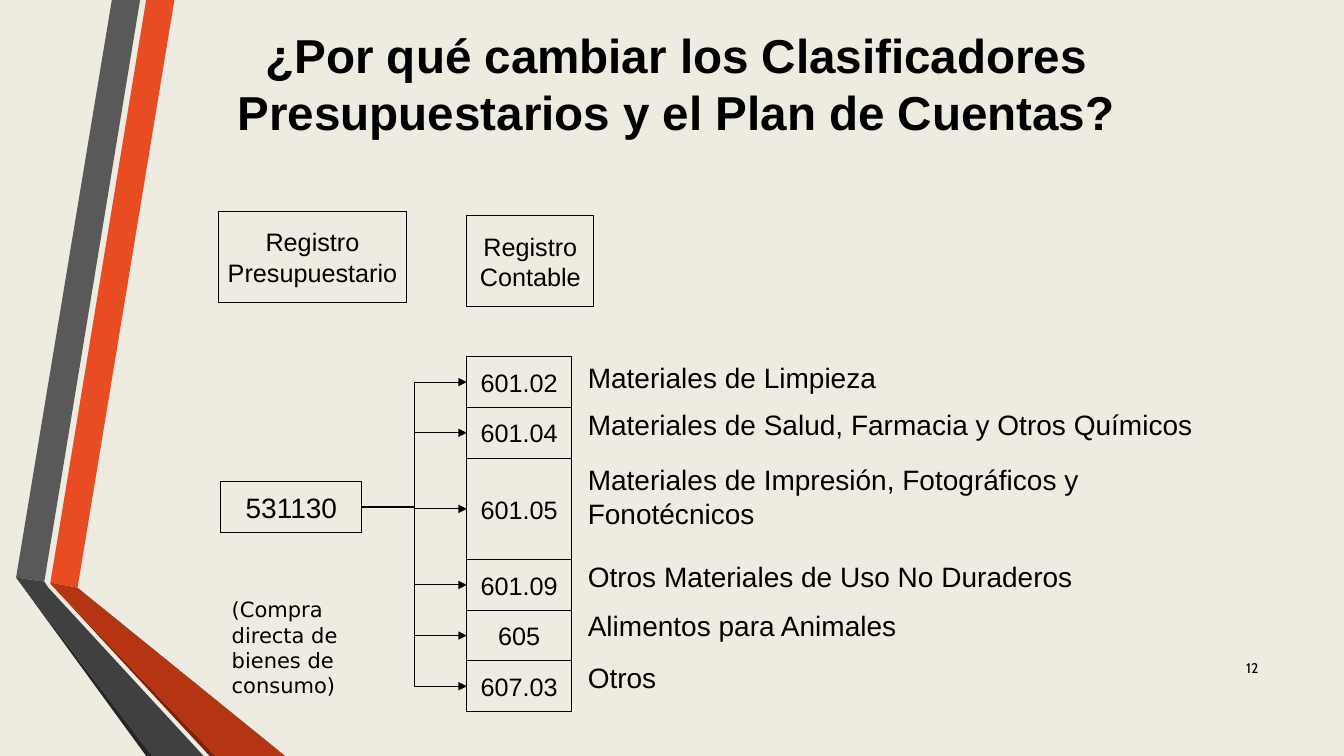
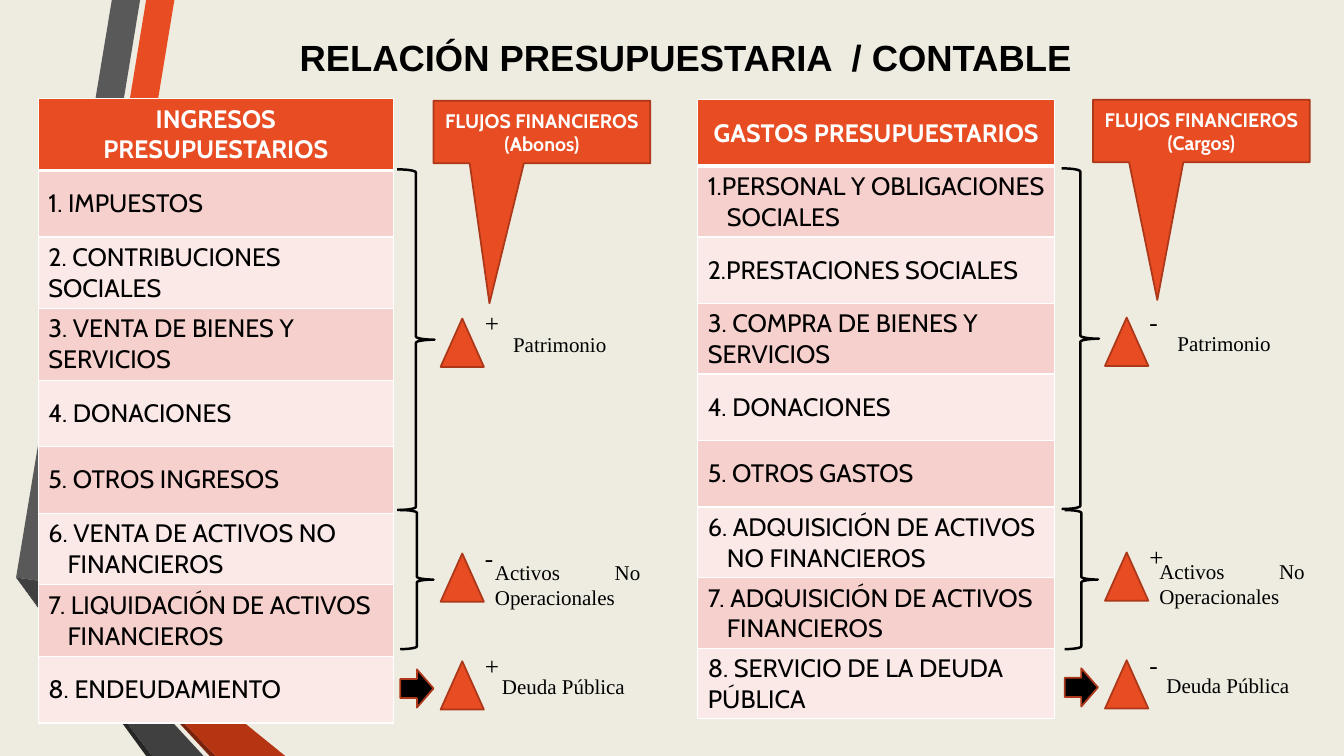
import pptx
import pptx.util
import pptx.dml.color
import pptx.enum.shapes
import pptx.enum.text
import pptx.oxml
import pptx.oxml.ns

Inches, Pt = pptx.util.Inches, pptx.util.Pt
RGBColor = pptx.dml.color.RGBColor
SHAPE = pptx.enum.shapes.MSO_SHAPE
CONNECTOR = pptx.enum.shapes.MSO_CONNECTOR
ALIGN = pptx.enum.text.PP_ALIGN
ANCHOR = pptx.enum.text.MSO_ANCHOR
AUTO_SIZE = pptx.enum.text.MSO_AUTO_SIZE

CREAM = RGBColor(0xEE, 0xEC, 0xE1)
BLACK = RGBColor(0, 0, 0)
WHITE = RGBColor(0xFF, 0xFF, 0xFF)
ORANGE = RGBColor(0xE8, 0x4C, 0x22)
RUST = RGBColor(0xAC, 0x38, 0x19)
PINK = RGBColor(0xF6, 0xD0, 0xCD)
PALE_PINK = RGBColor(0xFB, 0xE9, 0xE8)

RIBBONS = [
    (ORANGE, [(0.5, 5.78), (0.77, 5.83), (1.73, 0), (1.45, 0)]),
    (RGBColor(0x59, 0x59, 0x59), [(1.39, 0), (1.11, 0), (0.16, 5.73), (0.44, 5.77)]),
    (RGBColor(0x26, 0x26, 0x26), [(0.16, 5.73), (1.45, 7.5), (1.51, 7.5)]),
    (RGBColor(0x78, 0x23, 0x0D), [(0.5, 5.79), (2.08, 7.5), (2.14, 7.5)]),
    (RGBColor(0xB5, 0x35, 0x13), [(0.5, 5.79), (2.14, 7.5), (2.83, 7.5), (0.77, 5.83), (0.5, 5.78)]),
    (RGBColor(0x40, 0x40, 0x40), [(2.02, 7.5), (0.48, 5.83), (0.44, 5.77), (0.16, 5.73), (1.51, 7.5)]),
]

# Slide 1
WHY_TITLE = "¿Por qué cambiar los Clasificadores Presupuestarios y el Plan de Cuentas?"
REGISTERS = [
    ("Registro\nPresupuestario", (2.17, 2.1, 1.86, 0.9)),
    ("Registro\nContable", (4.63, 2.14, 1.26, 0.9)),
]
BUDGET_CODE = "531130"
BUDGET_NOTE = "(Compra directa de bienes de consumo)"
PAGE_NUMBER = "12"
# code, rows taken, description, top of description
ACCOUNTS = [
    ("601.02", 1, "Materiales de Limpieza", 3.58),
    ("601.04", 1, "Materiales de Salud, Farmacia y Otros Químicos", 4.04),
    ("601.05", 2, "Materiales de Impresión, Fotográficos y\nFonotécnicos", 4.59),
    ("601.09", 1, "Otros Materiales de Uso No Duraderos", 5.55),
    ("605", 1, "Alimentos para Animales", 6.04),
    ("607.03", 1, "Otros", 6.55),
]
ACCOUNTS_TOP, ACCOUNTS_HEIGHT = 3.54, 3.52

# Slide 2
RELATION_TITLE = "RELACIÓN PRESUPUESTARIA  / CONTABLE"
# flow name, triangle top, label left from the brace, label top, label width and height
FLOWS = [
    ("Patrimonio", 3.16, 1.05, 3.24, 1.45, 0.35),
    ("Activos No Operacionales", 5.49, 0.87, 5.5, 1.64, 0.61),
    ("Deuda Pública", 6.56, 0.94, 6.63, 1.57, 0.35),
]
SIDES = [
    {
        "table": (0.38, 0.98, 3.52), "last_row": 0.66,
        "rows": ["INGRESOS PRESUPUESTARIOS", "1. IMPUESTOS", "2. CONTRIBUCIONES SOCIALES",
                 "3. VENTA DE BIENES Y SERVICIOS", "4. DONACIONES", "5. OTROS INGRESOS",
                 "6. VENTA DE ACTIVOS NO FINANCIEROS", "7. LIQUIDACIÓN DE ACTIVOS FINANCIEROS",
                 "8. ENDEUDAMIENTO"],
        "hanging": {6, 7},
        "callout": "FLUJOS FINANCIEROS (Abonos)", "callout_at": (4.3, 1), "pointer": (-0.242, 2.741),
        "flows_left": 3.94, "flows_shift": 0, "signs": "+-+",
    },
    {
        "table": (6.92, 0.99, 3.54), "last_row": 0.57,
        "rows": ["GASTOS PRESUPUESTARIOS", "1.PERSONAL Y OBLIGACIONES SOCIALES",
                 "2.PRESTACIONES SOCIALES", "3. COMPRA DE BIENES Y SERVICIOS", "4. DONACIONES",
                 "5. OTROS GASTOS", "6. ADQUISICIÓN DE ACTIVOS NO FINANCIEROS",
                 "7. ADQUISICIÓN DE ACTIVOS FINANCIEROS", "8. SERVICIO DE LA DEUDA PÚBLICA"],
        "hanging": {1, 6, 7},
        "callout": "FLUJOS FINANCIEROS (Cargos)", "callout_at": (10.84, 0.99), "pointer": (-0.203, 2.702),
        "flows_left": 10.53, "flows_shift": -0.01, "signs": "-+-",
    },
]


def inches(*lengths):
    return [Inches(length) for length in lengths]


def write(frame, text, size, font="Arial", color=BLACK, bold=False, align=ALIGN.LEFT, anchor=ANCHOR.TOP):
    frame.text = text
    frame.word_wrap = True
    frame.vertical_anchor = anchor
    for paragraph in frame.paragraphs:
        paragraph.alignment = align
        paragraph.font.size = Pt(size)
        paragraph.font.name = font
        paragraph.font.bold = bold
        paragraph.font.color.rgb = color


def add_text(slide, box, text, size, inset=True, **style):
    frame = slide.shapes.add_textbox(*inches(*box)).text_frame
    write(frame, text, size, **style)
    if not inset:
        frame.margin_left = frame.margin_right = frame.margin_top = frame.margin_bottom = 0


def paint(shape, fill=None, line=None, width=0.75):
    shape.shadow.inherit = False
    if fill is None:
        shape.fill.background()
    else:
        shape.fill.solid()
        shape.fill.fore_color.rgb = fill
    if line is None:
        shape.line.fill.background()
    else:
        shape.line.color.rgb = line
        shape.line.width = Pt(width)


def add_shape(slide, preset, box, **look):
    shape = slide.shapes.add_shape(preset, *inches(*box))
    paint(shape, **look)
    return shape


def add_box(slide, box, text, size=18):
    """Outlined rectangle whose centred text breaks only at line ends."""
    shape = add_shape(slide, SHAPE.RECTANGLE, box, line=BLACK)
    write(shape.text_frame, text, size, align=ALIGN.CENTER, anchor=ANCHOR.MIDDLE)
    shape.text_frame.word_wrap = False
    return shape


def set_title(slide, box, text, size):
    title = slide.shapes.title
    title.left, title.top, title.width, title.height = inches(*box)
    write(title.text_frame, text, size, bold=True, align=ALIGN.CENTER, anchor=ANCHOR.MIDDLE)
    title.text_frame.auto_size = AUTO_SIZE.NONE


def decorate_layout(layout, slide):
    """Draw the ribbons on the slide, then move them behind everything in its layout."""
    for position, (color, points) in enumerate(RIBBONS, start=2):
        start, *rest = [inches(*point) for point in points]
        builder = slide.shapes.build_freeform(*start)
        builder.add_line_segments(rest, close=True)
        ribbon = builder.convert_to_shape()
        paint(ribbon, fill=color)
        layout.shapes.element.insert(position, ribbon.element)


def add_arrow(slide, source, target):
    arrow = slide.shapes.add_connector(CONNECTOR.ELBOW, 0, 0, 0, 0)
    arrow.begin_connect(source, 3)
    arrow.end_connect(target, 1)
    arrow.line.color.rgb = BLACK
    arrow.line.width = Pt(0.75)
    namespace = pptx.oxml.ns.nsdecls("a")
    arrow.line._get_or_add_ln().append(pptx.oxml.parse_xml(f'<a:tailEnd {namespace} type="triangle"/>'))
    arrow.element.spPr.append(pptx.oxml.parse_xml(f"<a:effectLst {namespace}/>"))


def set_borders(cell, top, bottom):
    """White borders, 1 pt at the sides and as given above and below."""
    widths = {"lnL": 1, "lnR": 1, "lnT": top, "lnB": bottom}
    properties = cell._tc.get_or_add_tcPr()
    for position, (edge, width) in enumerate(widths.items()):
        properties.insert(position, pptx.oxml.parse_xml(
            f'<a:{edge} {pptx.oxml.ns.nsdecls("a")} w="{Pt(width)}">'
            f'<a:solidFill><a:srgbClr val="{WHITE}"/></a:solidFill></a:{edge}>'))


def add_budget_table(slide, side):
    left, top, width = side["table"]
    heights = [0.66] * (len(side["rows"]) - 1) + [side["last_row"]]
    table = slide.shapes.add_table(len(heights), 1, *inches(left, top, width, sum(heights))).table
    for index, (text, height) in enumerate(zip(side["rows"], heights)):
        header = index == 0
        table.rows[index].height = Inches(height)
        cell = table.cell(index, 0)
        cell.fill.solid()
        cell.fill.fore_color.rgb = ORANGE if header else PINK if index % 2 else PALE_PINK
        set_borders(cell, top=3 if index == 1 else 1, bottom=3 if header else 1)
        write(cell.text_frame, text, 18, font="Cabin", color=WHITE if header else BLACK, bold=header,
              align=ALIGN.CENTER if header else ALIGN.LEFT)
        cell.vertical_anchor = ANCHOR.MIDDLE
        if index in side["hanging"]:
            paragraph = cell.text_frame.paragraphs[0]._p.get_or_add_pPr()
            paragraph.set("marL", str(Inches(0.19)))
            paragraph.set("indent", str(-Inches(0.19)))


def add_flows(slide, side):
    left, shift = side["flows_left"], side["flows_shift"]
    accent = {"line": RUST, "width": 1.25}
    for box in [(left, 1.68 + shift, 0.37, 3.38), (left + 0.03, 5.06, 0.33, 1.38)]:
        add_shape(slide, SHAPE.RIGHT_BRACE, box, line=BLACK, width=1.75)
    add_shape(slide, SHAPE.RIGHT_ARROW, (left + 0.03, 6.64 + shift, 0.33, 0.38), fill=BLACK, **accent)
    for sign, (name, top, label_left, label_top, width, height) in zip(side["signs"], FLOWS):
        top += shift
        add_shape(slide, SHAPE.ISOSCELES_TRIANGLE, (left + 0.43, top, 0.43, 0.48), fill=ORANGE, **accent)
        serif = {"font": "Times New Roman", "align": ALIGN.JUSTIFY}
        add_text(slide, (left + 0.77, top - 0.16, 0.31, 0.4), sign, 18, **serif)
        add_text(slide, (left + label_left, label_top + shift, width, height), name, 15, **serif)
    callout = add_shape(slide, SHAPE.RECTANGULAR_CALLOUT, (*side["callout_at"], 2.15, 0.62),
                        fill=ORANGE, **accent)
    callout.adjustments[0], callout.adjustments[1] = side["pointer"]
    write(callout.text_frame, side["callout"], 14, font="Cabin", color=WHITE, bold=True,
          align=ALIGN.CENTER, anchor=ANCHOR.MIDDLE)


def build_why_slide(slide):
    set_title(slide, (2.21, 0.16, 9, 1.32), WHY_TITLE, 34)
    for name, box in REGISTERS:
        add_box(slide, box, name)
    budget = add_box(slide, (2.19, 4.78, 1.4, 0.5), BUDGET_CODE, 20)
    add_text(slide, (2.2, 5.29, 1.49, 1.68), BUDGET_NOTE, 15, font="DejaVu Sans", anchor=ANCHOR.BOTTOM)
    row_height = ACCOUNTS_HEIGHT / sum(rows for _, rows, _, _ in ACCOUNTS)
    top = ACCOUNTS_TOP
    for code, rows, description, description_top in ACCOUNTS:
        height = rows * row_height
        account = add_box(slide, (4.63, top, 1.04, height), code)
        add_arrow(slide, budget, account)
        add_text(slide, (5.83, description_top, 6.4, 0.34), description, 20, inset=False)
        top += height
    add_text(slide, (11.98, 6.43, 0.6, 0.4), PAGE_NUMBER, 10, font="Cabin",
             align=ALIGN.RIGHT, anchor=ANCHOR.MIDDLE)


def build_relation_slide(slide):
    set_title(slide, (1.82, 0.29, 9.97, 0.54), RELATION_TITLE, 26)
    for side in SIDES:
        add_budget_table(slide, side)
        add_flows(slide, side)


def main():
    deck = pptx.Presentation()
    deck.slide_width, deck.slide_height = inches(13.33, 7.5)
    background = deck.slide_master.background.fill
    background.solid()
    background.fore_color.rgb = CREAM
    layout = deck.slide_layouts.get_by_name("Title Only")
    why, relation = [deck.slides.add_slide(layout) for _ in range(2)]
    decorate_layout(layout, why)
    build_why_slide(why)
    build_relation_slide(relation)
    deck.save("out.pptx")


if __name__ == "__main__":
    main()
